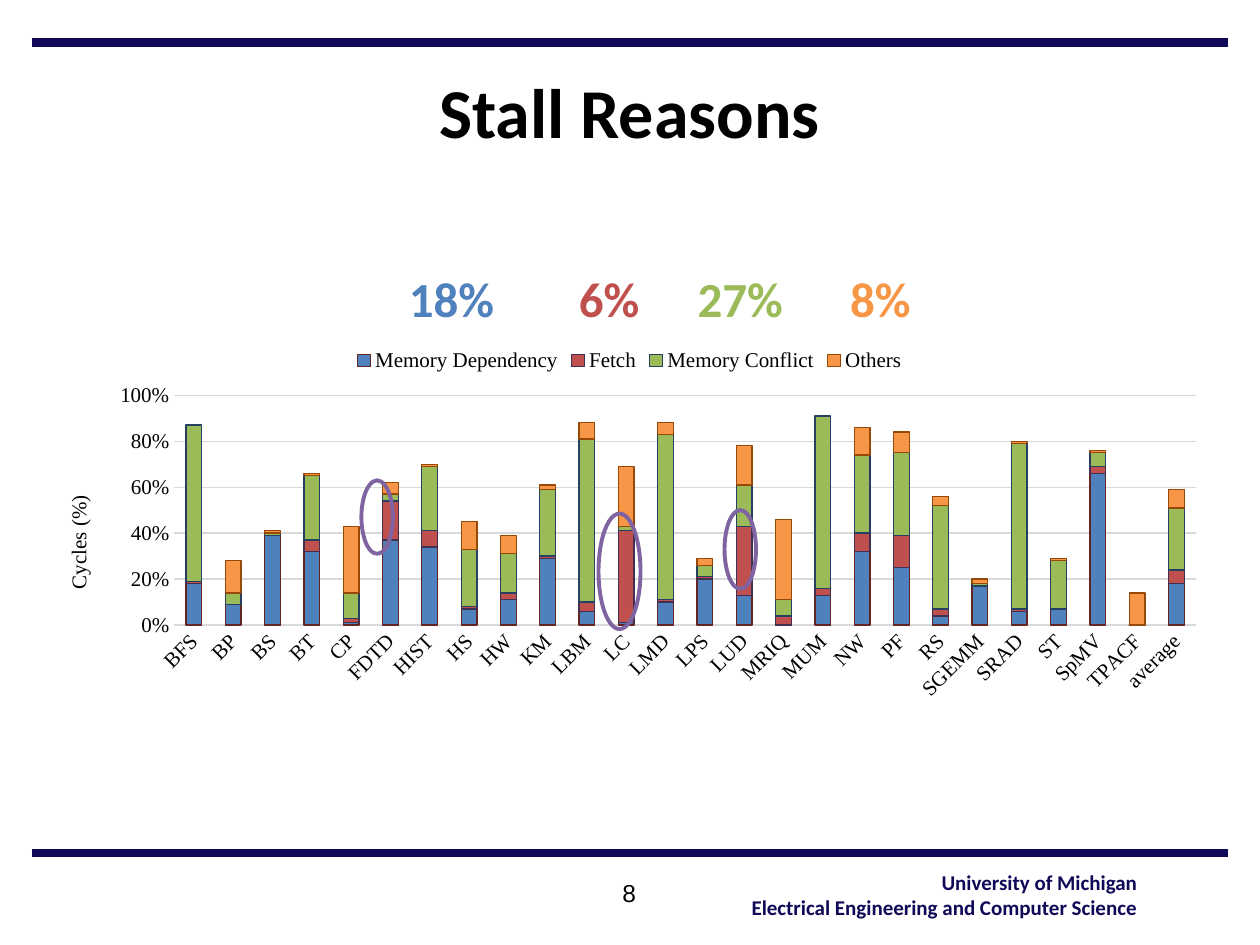
from pptx import Presentation
from pptx.chart.data import CategoryChartData
from pptx.dml.color import RGBColor
from pptx.enum.chart import XL_CHART_TYPE, XL_LEGEND_POSITION, XL_TICK_MARK
from pptx.enum.shapes import MSO_CONNECTOR, MSO_SHAPE
from pptx.enum.text import MSO_ANCHOR, PP_ALIGN
from pptx.oxml import parse_xml
from pptx.oxml.ns import nsdecls
from pptx.util import Pt

STACKED = XL_CHART_TYPE.COLUMN_STACKED
LEGEND_TOP = XL_LEGEND_POSITION.TOP
NO_TICK = XL_TICK_MARK.NONE
STRAIGHT = MSO_CONNECTOR.STRAIGHT
OVAL = MSO_SHAPE.OVAL
TOP, MIDDLE = MSO_ANCHOR.TOP, MSO_ANCHOR.MIDDLE
CENTER, RIGHT = PP_ALIGN.CENTER, PP_ALIGN.RIGHT

COLORS = {
    "navy": "0F0958", "black": "000000", "grid": "D9D9D9", "purple": "8064A2",
    "blue": "4F81BD", "red": "C0504D", "green": "9BBB59", "orange": "F79646",
    "maroon": "632523", "plum": "403152", "deep blue": "254061", "brown": "984807",
}
BENCHMARKS = (
    "BFS BP BS BT CP FDTD HIST HS HW KM LBM LC LMD LPS LUD MRIQ MUM NW PF RS "
    "SGEMM SRAD ST SpMV TPACF average"
).split()
STALLS = [
    ("Memory Dependency", "blue", "maroon",
     [0.18, 0.09, 0.39, 0.32, 0.01, 0.37, 0.34, 0.07, 0.11, 0.29, 0.06, 0.01, 0.1,
      0.2, 0.13, 0, 0.13, 0.32, 0.25, 0.04, 0.17, 0.06, 0.07, 0.66, 0, 0.18]),
    ("Fetch", "red", "plum",
     [0.01, 0, 0, 0.05, 0.02, 0.17, 0.07, 0.01, 0.03, 0.01, 0.04, 0.4, 0.01,
      0.01, 0.3, 0.04, 0.03, 0.08, 0.14, 0.03, 0, 0.01, 0, 0.03, 0, 0.06]),
    ("Memory Conflict", "green", "deep blue",
     [0.68, 0.05, 0.01, 0.28, 0.11, 0.03, 0.28, 0.25, 0.17, 0.29, 0.71, 0.02, 0.72,
      0.05, 0.18, 0.07, 0.75, 0.34, 0.36, 0.45, 0.01, 0.72, 0.21, 0.06, 0, 0.27]),
    ("Others", "orange", "brown",
     [0, 0.14, 0.01, 0.01, 0.29, 0.05, 0.01, 0.12, 0.08, 0.02, 0.07, 0.26, 0.05,
      0.03, 0.17, 0.35, 0, 0.12, 0.09, 0.04, 0.02, 0.01, 0.01, 0.01, 0.14, 0.08]),
]
AVERAGES = [("18%", "blue", 0, 72), ("6%", "red", 90, 72),
            ("27%", "green", 168, 66), ("8%", "orange", 251, 60)]
FETCH_PEAKS = [(184, 83, 18, 42), (319.5, 102, 24, 66), (391.5, 100, 18, 45)]


def rgb(name):
    """Return the named colour."""
    return RGBColor.from_string(COLORS[name])


def set_font(font, color, **values):
    """Apply a colour and format values to a font."""
    font.color.rgb = rgb(color)
    for key, value in values.items():
        setattr(font, key, value)


def set_line(line, color, width):
    """Give an outline its colour and width in points."""
    line.color.rgb = rgb(color)
    line.width = Pt(width)


def add_text(slide, box, lines, align, color, anchor=TOP, **values):
    """Write lines of text in a box."""
    frame = slide.shapes.add_textbox(*map(Pt, box)).text_frame
    frame.word_wrap = True
    frame.vertical_anchor = anchor
    for index, line in enumerate(lines):
        paragraph = frame.add_paragraph() if index else frame.paragraphs[0]
        paragraph.alignment = align
        run = paragraph.add_run()
        run.text = line
        set_font(run.font, color, **values)


def add_rule(slide, left, y, width):
    """Draw a horizontal navy rule."""
    rule = slide.shapes.add_connector(
        STRAIGHT, Pt(left), Pt(y), Pt(left + width), Pt(y))
    set_line(rule.line, "navy", 5)
    rule._element.spPr.append(parse_xml(f"<a:effectLst {nsdecls('a')}/>"))


def add_header(slide, left, top, width):
    """Place the upper rule and the title below it."""
    add_rule(slide, left, top, width)
    add_text(slide, (left + 36, top + 6, width - 72, 65), ["Stall Reasons"], CENTER,
             "black", MIDDLE, name="Calibri", size=Pt(40), bold=True)


def add_footer(slide, left, top, width):
    """Place the lower rule, page number and affiliation."""
    add_rule(slide, left, top, width)
    add_text(slide, (left + 266.5, top + 10.5, 150, 36), ["8"], CENTER, "black",
             name="Arial", size=Pt(14))
    add_text(slide, (left + 401, top + 6, 238, 36),
             ["University of Michigan", "Electrical Engineering and Computer Science"],
             RIGHT, "navy", name="Calibri", size=Pt(12), bold=True)


def add_averages(slide, left, top):
    """Place the average share of each stall reason."""
    for share, color, offset, width in AVERAGES:
        add_text(slide, (left + offset, top, width, 48), [share], CENTER, color,
                 name="Calibri", size=Pt(28), bold=True)


def style_axes(chart, font):
    """Format both axes and the gridlines."""
    benchmarks, cycles = chart.category_axis, chart.value_axis
    for axis in (benchmarks, cycles):
        axis.major_tick_mark = axis.minor_tick_mark = NO_TICK
        set_font(axis.tick_labels.font, "black", **font)
    set_line(benchmarks.format.line, "grid", 0.75)
    benchmarks._element.xpath("c:txPr/a:bodyPr")[0].set("rot", "-2700000")
    for key, value in {"minimum_scale": 0, "maximum_scale": 1,
                       "major_unit": 0.2}.items():
        setattr(cycles, key, value)
    cycles.tick_labels.number_format = "0%"
    cycles.tick_labels.number_format_is_linked = False
    cycles.format.line.fill.background()
    set_line(cycles.major_gridlines.format.line, "grid", 0.75)
    caption = cycles.axis_title.text_frame
    caption.text = "Cycles (%)"
    set_font(caption.paragraphs[0].runs[0].font, "black", bold=False, **font)
    cycles._element.xpath("c:title//a:bodyPr")[0].set("rot", "-5400000")


def add_stall_chart(slide, left, top, width, height):
    """Draw the stacked stall chart and ring its fetch peaks."""
    data = CategoryChartData(number_format="0%")
    data.categories = BENCHMARKS
    for reason, _, _, shares in STALLS:
        data.add_series(reason, shares)
    chart = slide.shapes.add_chart(
        STACKED, *map(Pt, (left, top, width, height)), data).chart
    font = {"name": "Times New Roman", "size": Pt(12)}
    set_font(chart.font, "black", **font)
    chart.has_title = False
    chart.has_legend = True
    chart.legend.position = LEGEND_TOP
    chart.legend.include_in_layout = False
    set_font(chart.legend.font, "black", **font)
    style_axes(chart, font)
    plot = chart.plots[0]
    for key, value in {"gap_width": 150, "overlap": 100,
                       "vary_by_categories": False}.items():
        setattr(plot, key, value)
    for series, (_, fill, edge, _) in zip(plot.series, STALLS):
        series.format.fill.solid()
        series.format.fill.fore_color.rgb = rgb(fill)
        set_line(series.format.line, edge, 0.75)
    for x, y, w, h in FETCH_PEAKS:
        ring = slide.shapes.add_shape(OVAL, *map(Pt, (left + x, top + y, w, h)))
        ring.shadow.inherit = False
        ring.fill.background()
        set_line(ring.line, "purple", 2.25)


def main():
    """Build and save the slide."""
    deck = Presentation()
    deck.slide_width, deck.slide_height = Pt(720), Pt(540)
    slide = deck.slides.add_slide(deck.slide_layouts[6])
    add_header(slide, 18, 24.5, 683.5)
    add_averages(slide, 222, 150)
    add_stall_chart(slide, 22.5, 191.5, 674.5, 213)
    add_footer(slide, 18, 487.5, 683.5)
    deck.save("out.pptx")


if __name__ == "__main__":
    main()
